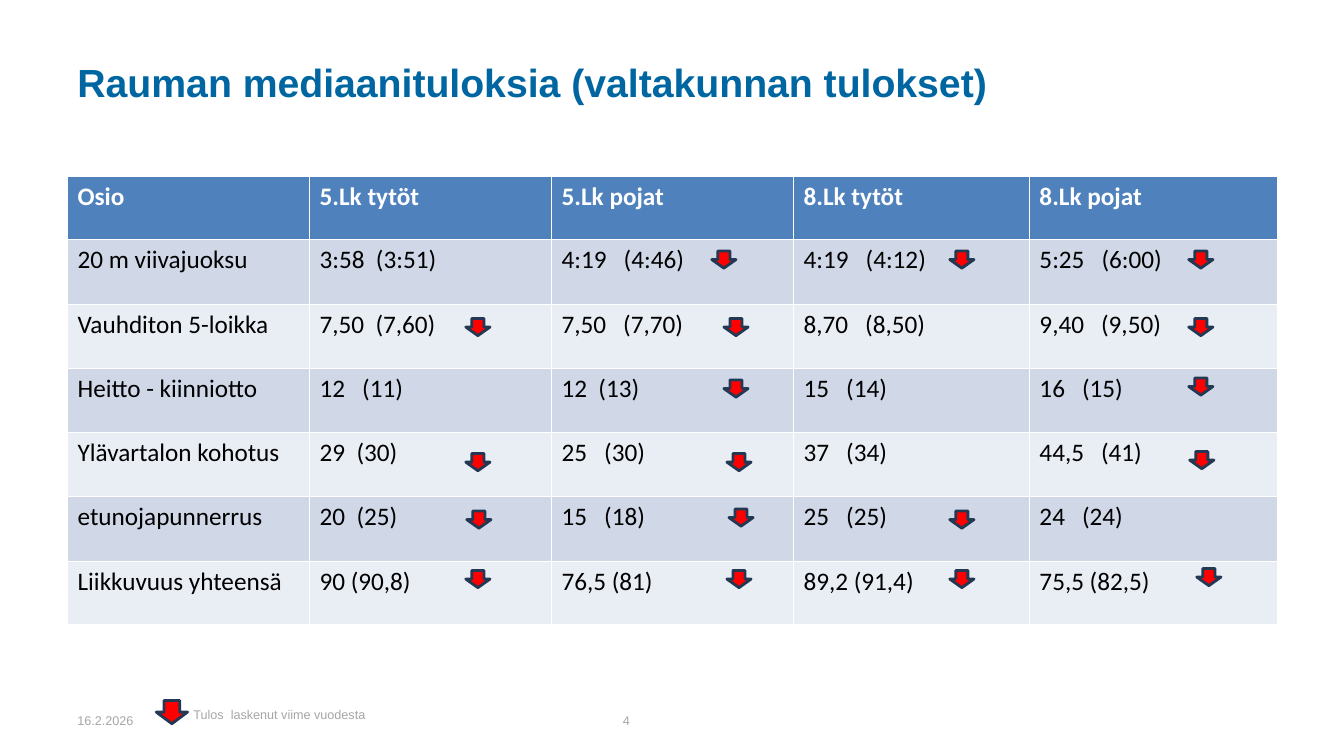
"""Build the slide of median fitness results in Rauma compared with national results."""
from pptx import Presentation
from pptx.dml.color import RGBColor
from pptx.enum.shapes import MSO_SHAPE
from pptx.enum.text import MSO_ANCHOR
from pptx.util import Pt

PX = 9144
TITLE_BLUE = RGBColor(0x00, 0x66, 0xA1)
HEADER_BLUE = RGBColor(0x4F, 0x81, 0xBD)
BAND_DARK = RGBColor(0xD0, 0xD8, 0xE8)
BAND_LIGHT = RGBColor(0xE9, 0xED, 0xF4)
WHITE = RGBColor(0xFF, 0xFF, 0xFF)
BLACK = RGBColor(0x00, 0x00, 0x00)
FOOTER_GREY = RGBColor(0xA6, 0xA6, 0xA6)
ARROW_RED = RGBColor(0xFF, 0x00, 0x00)
ARROW_OUTLINE = RGBColor(0x23, 0x39, 0x53)


def style_font(paragraph, name, size, color, bold=False):
    font = paragraph.font
    font.name = name
    font.size = Pt(size)
    font.color.rgb = color
    font.bold = bold


def add_arrow(left, top, width, height):
    shape = slide.shapes.add_shape(
        MSO_SHAPE.DOWN_ARROW, left * PX, top * PX, width * PX, height * PX)
    shape.shadow.inherit = False
    shape.fill.solid()
    shape.fill.fore_color.rgb = ARROW_RED
    shape.line.color.rgb = ARROW_OUTLINE
    shape.line.width = Pt(2)


presentation = Presentation()
presentation.slide_width = 1333 * PX
presentation.slide_height = 750 * PX
slide = presentation.slides.add_slide(presentation.slide_layouts[6])

texts = [
    ("Rauman mediaanituloksia (valtakunnan tulokset)", 67, 19, 1200, 125, 28, TITLE_BLUE, True),
    ("16.2.2026", 67, 695, 117, 40, 9, FOOTER_GREY, False),
    ("Tulos  laskenut viime vuodesta", 182, 689, 422, 40, 9, FOOTER_GREY, False),
    ("4", 608, 695, 311, 40, 9, FOOTER_GREY, False),
]
for text, left, top, width, height, size, color, bold in texts:
    text_box = slide.shapes.add_textbox(left * PX, top * PX, width * PX, height * PX)
    text_frame = text_box.text_frame
    text_frame.word_wrap = True
    text_frame.vertical_anchor = MSO_ANCHOR.MIDDLE
    text_frame.text = text
    style_font(text_frame.paragraphs[0], "Arial", size, color, bold)

results = [
    ["Osio", "5.Lk tytöt", "5.Lk pojat", "8.Lk tytöt", "8.Lk pojat"],
    ["20 m viivajuoksu", "3:58  (3:51)", "4:19   (4:46)", "4:19   (4:12)", "5:25   (6:00)"],
    ["Vauhditon 5-loikka", "7,50  (7,60)", "7,50   (7,70)", "8,70   (8,50)", "9,40   (9,50)"],
    ["Heitto - kiinniotto", "12   (11)", "12  (13)", "15   (14)", "16   (15)"],
    ["Ylävartalon kohotus", "29  (30)", "25   (30)", "37   (34)", "44,5   (41)"],
    ["etunojapunnerrus", "20  (25)", "15   (18)", "25   (25)", "24   (24)"],
    ["Liikkuvuus yhteensä", "90 (90,8)", "76,5 (81)", "89,2 (91,4)", "75,5 (82,5)"],
]
column_widths = [240, 240, 240, 234, 246]
row_heights = [63, 64, 64, 63, 64, 64, 63]
table = slide.shapes.add_table(
    len(results), len(column_widths), 67 * PX, 175 * PX, 1200 * PX, 445 * PX).table
for column, width in zip(table.columns, column_widths):
    column.width = width * PX
for row_index, (values, height) in enumerate(zip(results, row_heights)):
    table.rows[row_index].height = height * PX
    is_header = row_index == 0
    band = BAND_DARK if row_index % 2 else BAND_LIGHT
    for column_index, value in enumerate(values):
        cell = table.cell(row_index, column_index)
        cell.text = value
        cell.fill.solid()
        cell.fill.fore_color.rgb = HEADER_BLUE if is_header else band
        style_font(cell.text_frame.paragraphs[0], "Calibri", 18,
                   WHITE if is_header else BLACK, is_header)

decline_positions = [
    (706, 249), (942, 249), (1179, 249),
    (462, 316), (718, 316), (1179, 316),
    (718, 377), (1179, 375),
    (462, 450), (721, 450), (1180, 448),
    (463, 507), (723, 505), (942, 507),
    (462, 566), (721, 566), (942, 566), (1187, 564),
]
for left, top in decline_positions:
    add_arrow(left, top, 24, 17)
add_arrow(155, 695, 31, 23)

presentation.save("out.pptx")
